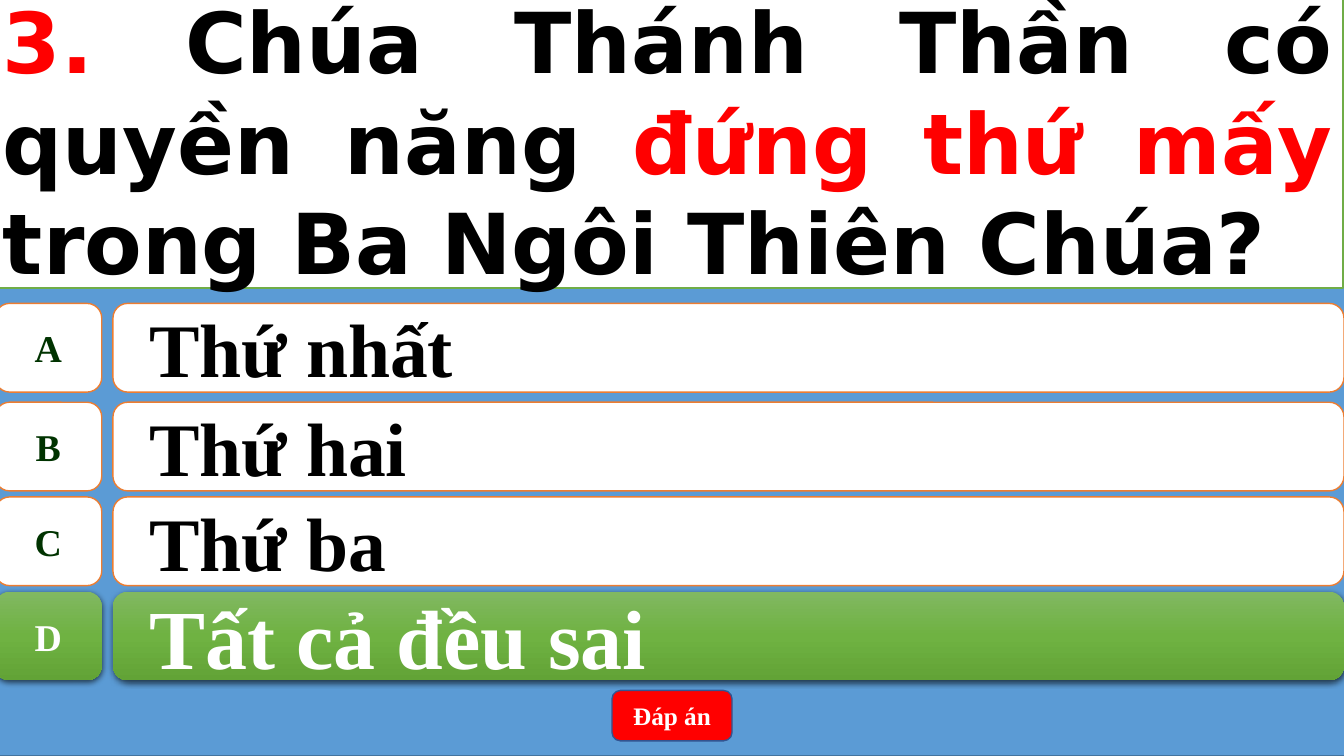
"""Build a quiz slide with a question, four answers and the right one in green."""
from pptx import Presentation
from pptx.dml.color import RGBColor
from pptx.enum.shapes import MSO_SHAPE as Shape
from pptx.enum.text import MSO_ANCHOR as Anchor, PP_ALIGN as Align
from pptx.oxml import parse_xml
from pptx.oxml.ns import nsdecls
from pptx.util import Inches, Pt

COLORS = {"blue": "5B9BD5", "edge": "43739E", "white": "FFFFFF", "orange": "ED7D31",
          "letter": "003300", "black": "000000", "red": "FF0000", "navy": "325491",
          "green": "70AD47"}
GREEN_STOPS = [(0, "81B861"), (50, "6FB242"), (100, "62A336")]
QUESTION = [("3. ", "red"), ("Chúa Thánh Thần có quyền năng ", "black"),
            ("đứng thứ mấy ", "red"), ("trong Ba Ngôi Thiên Chúa?", "black")]
ANSWERS = [("A", "Thứ nhất", 54, 3.01), ("B", "Thứ hai", 54, 3.99),
           ("C", "Thứ ba", 54, 4.93), ("D", "Tất cả đều sai", 60, 5.87)]
CORRECT = "D"
BUTTON = "Đáp án"
SERIF, SANS = "Times New Roman", "DejaVu Sans"
W, H = 13.33, 7.5
LETTER_X, LETTER_W, ANSWER_X, ROW_H = -0.05, 1.06, 1.12, 0.88


def rgb(name):
    return RGBColor.from_string(COLORS[name])


def add_box(s, kind, box, fill, line):
    sp = s.shapes.add_shape(kind, *map(Inches, box))
    sp.shadow.inherit = False
    sp.fill.solid()
    sp.fill.fore_color.rgb = rgb(fill)
    sp.line.color.rgb = rgb(line)
    sp.line.width = Pt(1)
    return sp


def add_text(sp, runs, size, font=SERIF, align=Align.CENTER, wrap=True):
    tf = sp.text_frame
    tf.word_wrap, tf.vertical_anchor = wrap, Anchor.MIDDLE
    p = tf.paragraphs[0]
    p.alignment = align
    for text, color in runs:
        r = p.add_run()
        r.text = text
        for key, value in {"size": Pt(size), "name": font, "bold": True}.items():
            setattr(r.font, key, value)
        r.font.color.rgb = rgb(color)
    return p


def make_green(sp):
    sp.line.fill.background()
    stops = "".join(f'<a:gs pos="{pos * 1000}"><a:srgbClr val="{color}"/></a:gs>'
                    for pos, color in GREEN_STOPS)
    gradient = parse_xml(f'<a:gradFill {nsdecls("a")} rotWithShape="1"><a:gsLst>{stops}</a:gsLst>'
                         '<a:lin ang="5400000" scaled="0"/></a:gradFill>')
    shadow = parse_xml(f'<a:effectLst {nsdecls("a")}><a:outerShdw blurRad="{Pt(4.5)}" '
                       f'dist="{Pt(1.5)}" dir="5400000" algn="ctr" rotWithShape="0">'
                       '<a:srgbClr val="000000"><a:alpha val="63000"/></a:srgbClr>'
                       '</a:outerShdw></a:effectLst>')
    for tag, new in {"a:solidFill": gradient, "a:effectLst": shadow}.items():
        old = sp._element.spPr.xpath(tag)[0]
        old.getparent().replace(old, new)


def add_answer(s, letter, answer, size, top):
    correct = letter == CORRECT
    key = add_box(s, Shape.FLOWCHART_ALTERNATE_PROCESS,
                  (LETTER_X, top, LETTER_W, ROW_H), "white", "orange")
    add_text(key, [(letter, "white" if correct else "letter")], 27, wrap=False)
    bar = add_box(s, Shape.ROUNDED_RECTANGLE,
                  (ANSWER_X, top, W - ANSWER_X, ROW_H), "white", "orange")
    p = add_text(bar, [(answer, "white" if correct else "black")], size, align=Align.LEFT)
    p.level = 1
    pPr = p._p.get_or_add_pPr()
    pPr.set("marL", str(Inches(0.5)))
    pPr.set("indent", str(Inches(-0.28)))
    if correct:
        make_green(key)
        make_green(bar)


def main():
    prs = Presentation()
    prs.slide_width, prs.slide_height = Inches(W), Inches(H)
    s = prs.slides.add_slide(prs.slide_layouts[6])
    add_box(s, Shape.RECTANGLE, (-0.05, 0, 13.39, H), "blue", "edge")
    for row in ANSWERS:
        add_answer(s, *row)
    button = add_box(s, Shape.ROUNDED_RECTANGLE, (6.07, 6.85, 1.19, 0.5), "red", "navy")
    add_text(button, [(BUTTON, "white")], 18)
    question = add_box(s, Shape.RECTANGLE, (-0.07, -0.07, 13.39, 2.93), "white", "green")
    add_text(question, QUESTION, 60, SANS, Align.JUSTIFY)
    prs.save("out.pptx")


if __name__ == "__main__":
    main()
